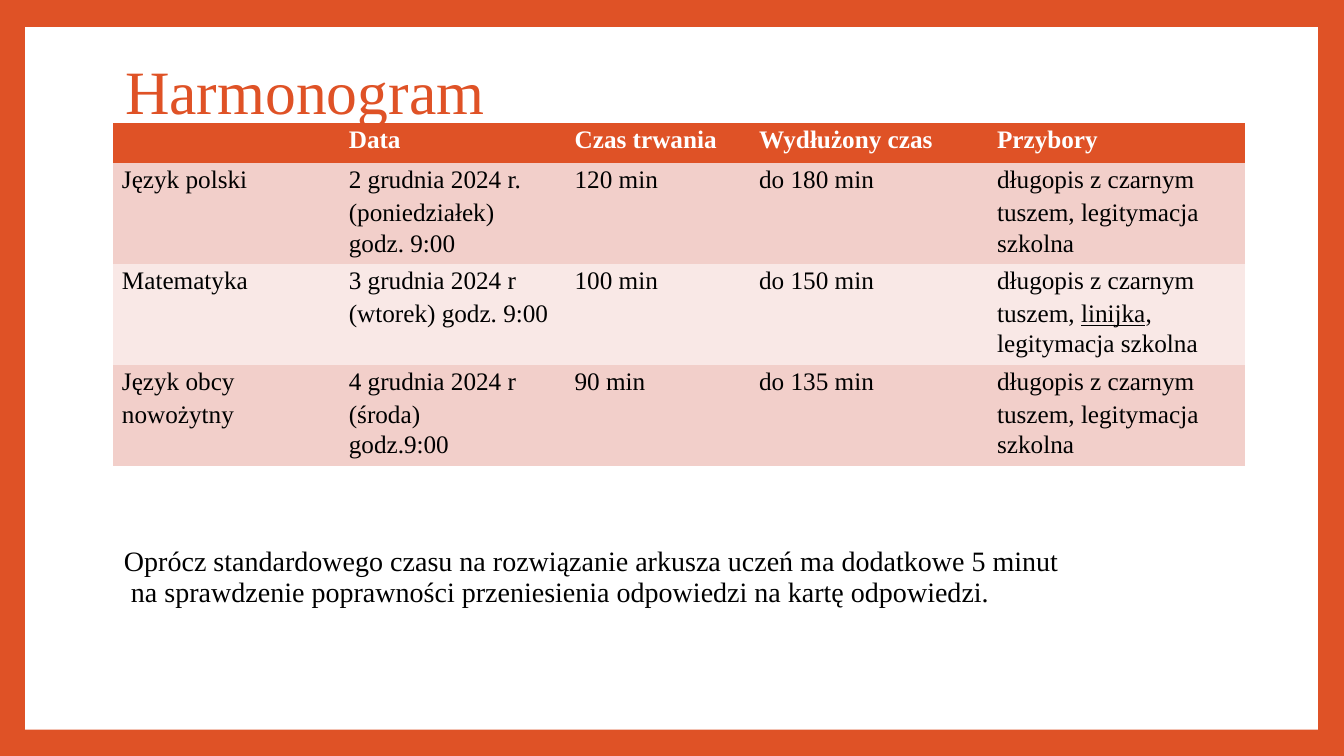
from pptx import Presentation
from pptx.dml.color import RGBColor
from pptx.enum.shapes import MSO_SHAPE
from pptx.util import Inches, Pt

RECTANGLE = MSO_SHAPE.RECTANGLE
ORANGE, WHITE, BLACK = "DF5226", "FFFFFF", "000000"
ROSE, PALE_ROSE = "F2CFCA", "F9E8E6"
NO_GRID_STYLE = "{2D5ABB26-0587-4C30-8999-92F81FD0307C}"

HEADINGS = ["", "Data", "Czas trwania", "Wydłużony czas", "Przybory"]
COLUMN_WIDTHS = [1.84, 2.53, 1.83, 2.25, 2.78]
COLUMN_INDENTS = [0.09, 0.5, 0.21, 0.21, 0.32]
HEADING_HEIGHT = 0.4
LINE_HEIGHTS = [0.35, 0.3, 0.35]
SUPPLIES = ["długopis z czarnym", "tuszem, legitymacja", "szkolna"]
MATHS_SUPPLIES = ["długopis z czarnym", "tuszem, _linijka_,", "legitymacja szkolna"]
EXAMS = [
    (ROSE, [["Język polski"], ["2 grudnia 2024 r.", "(poniedziałek)", "godz. 9:00"],
            ["120 min"], ["do 180 min"], SUPPLIES]),
    (PALE_ROSE, [["Matematyka"], ["3 grudnia 2024 r", "(wtorek) godz. 9:00"],
                 ["100 min"], ["do 150 min"], MATHS_SUPPLIES]),
    (ROSE, [["Język obcy", "nowożytny"], ["4 grudnia 2024 r", "(środa)", "godz.9:00"],
            ["90 min"], ["do 135 min"], SUPPLIES]),
]
EXTRA_TIME = ["Oprócz standardowego czasu na rozwiązanie arkusza uczeń ma dodatkowe 5 minut",
              " na sprawdzenie poprawności przeniesienia odpowiedzi na kartę odpowiedzi."]


def rgb(color):
    return RGBColor.from_string(color)


class ScheduleSlide:
    font = "Times New Roman"

    def __init__(self, slide):
        self.slide = slide

    def panel(self, left, top, width, height, color):
        panel = self.slide.shapes.add_shape(
            RECTANGLE, Inches(left), Inches(top), Inches(width), Inches(height))
        panel.shadow.inherit = False
        panel.fill.solid()
        panel.fill.fore_color.rgb = rgb(color)
        panel.line.fill.background()

    def run(self, paragraph, text, size, color, bold=False, underline=False):
        run = paragraph.add_run()
        run.text = text
        run.font.name = self.font
        run.font.size = Pt(size)
        run.font.color.rgb = rgb(color)
        run.font.bold = bold
        run.font.underline = underline

    def text(self, left, top, width, height, lines, size, color, inset, before, spacing=None):
        box = self.slide.shapes.add_textbox(
            Inches(left), Inches(top), Inches(width), Inches(height))
        frame = box.text_frame
        frame.word_wrap = True
        frame.margin_left = frame.margin_right = frame.margin_bottom = 0
        frame.margin_top = Inches(inset)
        paragraph = frame.paragraphs[0]
        paragraph.space_before = Pt(before)
        if spacing:
            paragraph.line_spacing = Pt(spacing)
        for number, line in enumerate(lines):
            if number:
                paragraph.add_line_break()
            self.run(paragraph, line, size, color)

    def cell(self, cell, text, fill, indent, color=BLACK, bold=False, leading=True):
        cell.fill.solid()
        cell.fill.fore_color.rgb = rgb(fill)
        cell.margin_left = Inches(indent)
        cell.margin_right = cell.margin_bottom = 0
        cell.margin_top = Inches(0.03 if leading and text else 0)
        paragraph = cell.text_frame.paragraphs[0]
        if not text:
            paragraph.font.size = Pt(18)
            return
        if leading:
            paragraph.space_before = Pt(2.2)
        else:
            paragraph.line_spacing = Pt(20.4)
        for number, part in enumerate(text.split("_")):
            self.run(paragraph, part, 18, color, bold, underline=number % 2 == 1)

    def schedule(self, left, top):
        heights = [HEADING_HEIGHT] + LINE_HEIGHTS * len(EXAMS)
        table = self.slide.shapes.add_table(
            len(heights), len(HEADINGS), Inches(left), Inches(top),
            Inches(sum(COLUMN_WIDTHS)), Inches(sum(heights))).table
        table.horz_banding = False
        table._tbl.tblPr.find("{*}tableStyleId").text = NO_GRID_STYLE
        for row, height in zip(table.rows, heights):
            row.height = Inches(height)
        for column, (width, indent) in enumerate(zip(COLUMN_WIDTHS, COLUMN_INDENTS)):
            table.columns[column].width = Inches(width)
            self.cell(table.cell(0, column), HEADINGS[column], ORANGE, indent, WHITE, bold=True)
            for exam, (fill, details) in enumerate(EXAMS):
                lines = details[column]
                for line in range(len(LINE_HEIGHTS)):
                    row = 1 + exam * len(LINE_HEIGHTS) + line
                    text = lines[line] if line < len(lines) else ""
                    self.cell(table.cell(row, column), text, fill, indent, leading=line == 0)


def main():
    presentation = Presentation()
    presentation.slide_width = Inches(13.33)
    presentation.slide_height = Inches(7.5)
    page = ScheduleSlide(presentation.slides.add_slide(presentation.slide_layouts[6]))
    page.panel(0, 0, 13.33, 7.5, ORANGE)
    page.panel(0.25, 0.27, 12.82, 6.97, WHITE)
    page.text(1.24, 0.52, 3.59, 0.76, ["Harmonogram"], 44, ORANGE, inset=0.01, before=1)
    page.text(1.23, 5.38, 10.44, 0.67, EXTRA_TIME, 20, BLACK,
              inset=0.05, before=3.7, spacing=21.6)
    page.schedule(1.12, 1.22)
    presentation.save("out.pptx")


if __name__ == "__main__":
    main()
